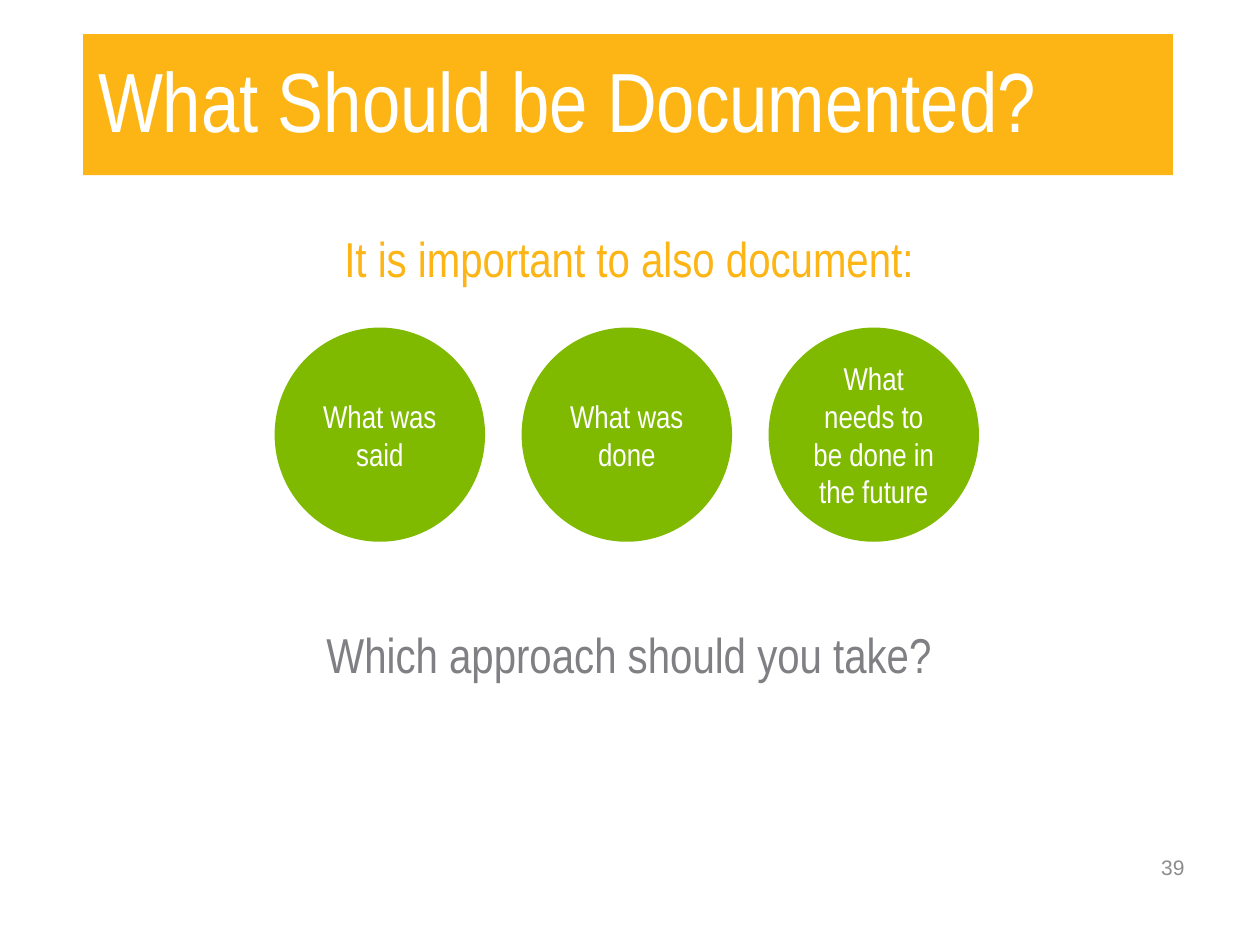
from pptx import Presentation
from pptx.dml.color import RGBColor
from pptx.enum.shapes import MSO_SHAPE
from pptx.enum.text import MSO_ANCHOR, PP_ALIGN
from pptx.util import Inches, Pt

RECTANGLE, OVAL = MSO_SHAPE.RECTANGLE, MSO_SHAPE.OVAL
LEFT, CENTER, RIGHT = PP_ALIGN.LEFT, PP_ALIGN.CENTER, PP_ALIGN.RIGHT
TOP, MIDDLE = MSO_ANCHOR.TOP, MSO_ANCHOR.MIDDLE

AMBER, GREEN, GREY, PALE_GREY, WHITE = "FCB514", "7FBA00", "808084", "8C8C8C", "FFFFFF"

# Content column, and the row of circles
COLUMN_LEFT, COLUMN_WIDTH = 0.68, 8.62
CIRCLE_LEFT, CIRCLE_TOP, CIRCLE_STEP = 2.18, 2.6, 1.96
CIRCLE_WIDTH, CIRCLE_HEIGHT = 1.67, 1.7


def color(hex_code):
    return RGBColor.from_string(hex_code)


def write(frame, text, size=28, fill=WHITE, font="Arial Narrow",
          align=CENTER, anchor=TOP, spacing=1.0):
    frame.word_wrap = True
    frame.vertical_anchor = anchor
    paragraph = frame.paragraphs[0]
    paragraph.alignment = align
    paragraph.line_spacing = spacing
    run = paragraph.add_run()
    run.text = text
    run.font.size = Pt(size)
    run.font.name = font
    run.font.color.rgb = color(fill)


def add_block(slide, kind, box, fill):
    block = slide.shapes.add_shape(kind, *map(Inches, box))
    block.shadow.inherit = False
    block.fill.solid()
    block.fill.fore_color.rgb = color(fill)
    block.line.fill.background()
    return block


def add_text(slide, text, box, **style):
    textbox = slide.shapes.add_textbox(*map(Inches, box))
    write(textbox.text_frame, text, **style)


def add_circle(slide, column, text):
    left = CIRCLE_LEFT + column * CIRCLE_STEP
    circle = add_block(slide, OVAL, (left, CIRCLE_TOP, CIRCLE_WIDTH, CIRCLE_HEIGHT), GREEN)
    write(circle.text_frame, text, size=18, anchor=MIDDLE)


def main():
    deck = Presentation()
    deck.slide_width, deck.slide_height = Inches(10), Inches(7.5)
    slide = deck.slides.add_slide(deck.slide_layouts[6])

    # Title band
    add_block(slide, RECTANGLE, (0.66, 0.27, 8.65, 1.12), AMBER)
    add_text(slide, "What Should be Documented?", (COLUMN_LEFT, 0.16, COLUMN_WIDTH, 1.36),
             size=48, align=LEFT, anchor=MIDDLE, spacing=0.9)

    # Lead-in above the circles, question below them
    for text, top, fill in (("It is important to also document:", 1.82, AMBER),
                            ("Which approach should you take?", 4.96, GREY)):
        add_text(slide, text, (COLUMN_LEFT, top, COLUMN_WIDTH, 0.5), fill=fill, spacing=0.9)

    # What to document
    topics = ("What was said", "What was done", "What needs to be done in the future")
    for column, topic in enumerate(topics):
        add_circle(slide, column, topic)

    # Slide number
    add_text(slide, "39", (7.17, 6.68, 2.33, 0.4), size=12, fill=PALE_GREY,
             font="Arial", align=RIGHT, anchor=MIDDLE)

    deck.save("out.pptx")


if __name__ == "__main__":
    main()
